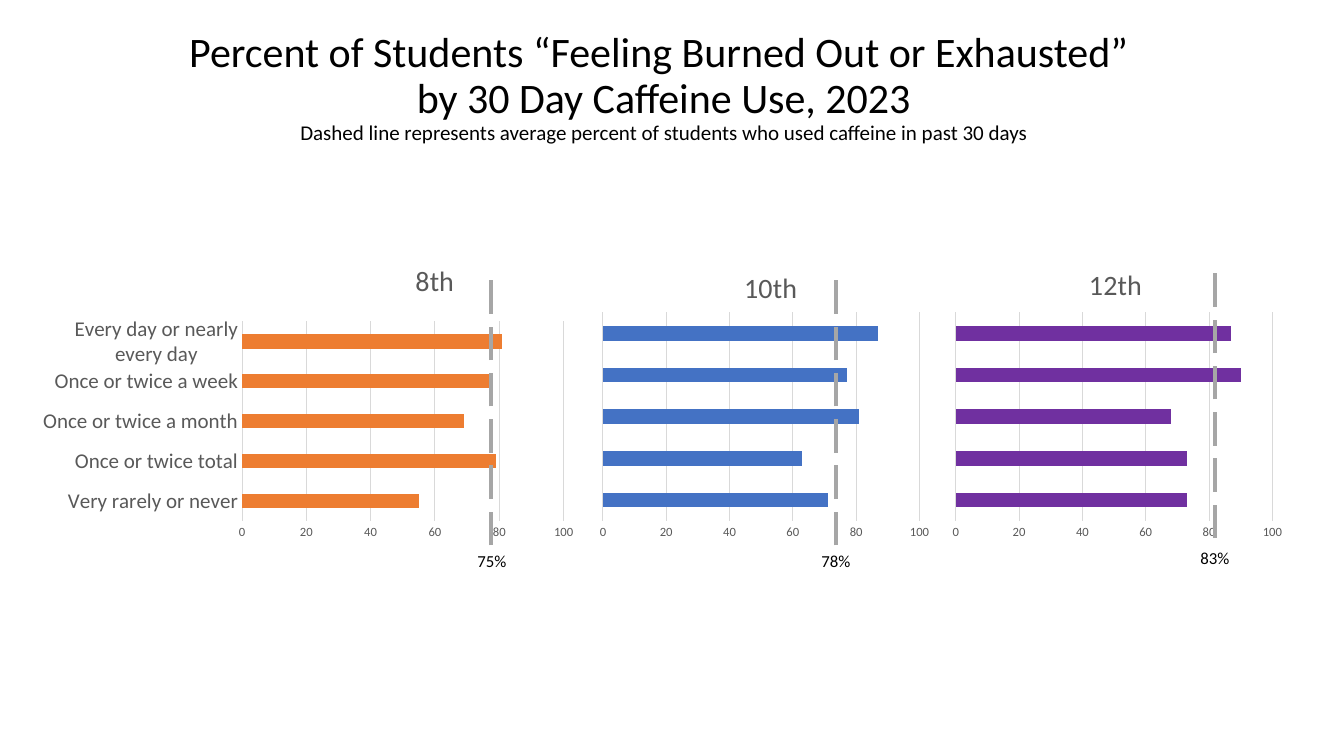
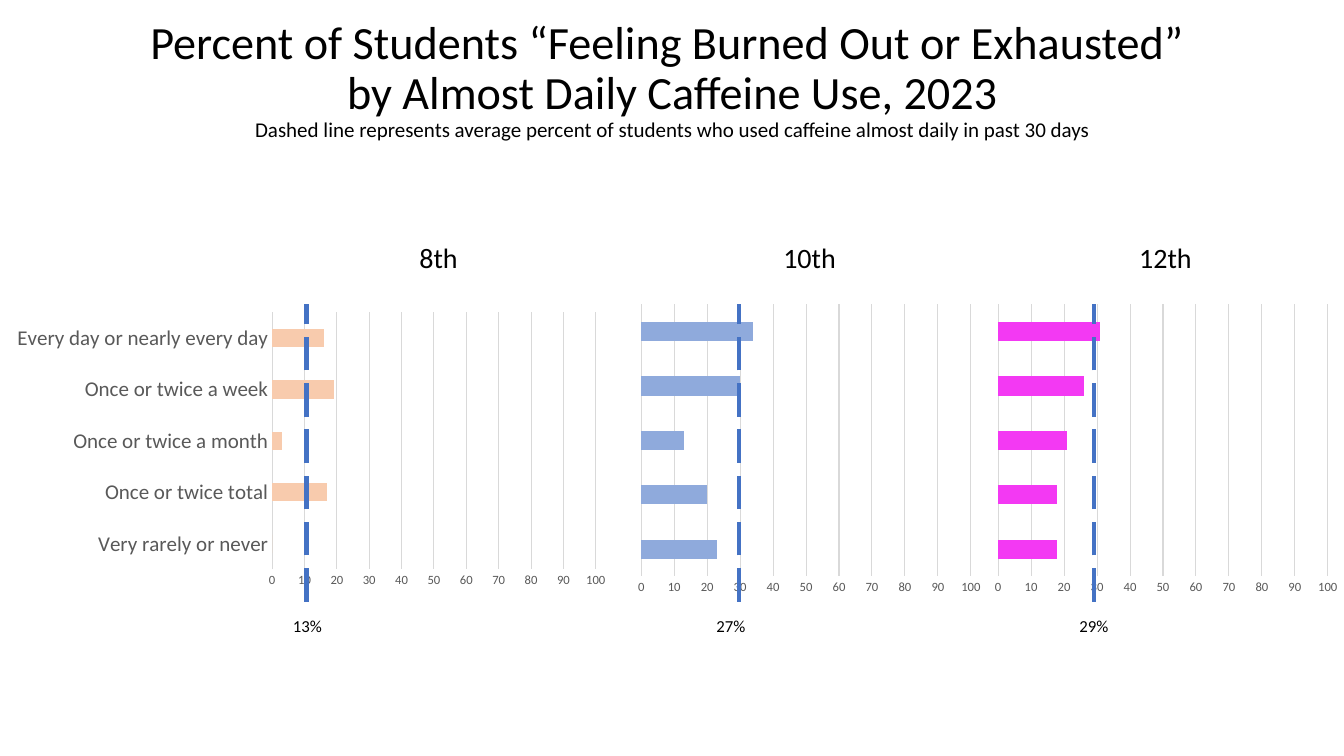
from dataclasses import dataclass

from lxml import etree
from pptx import Presentation
from pptx.chart.data import CategoryChartData
from pptx.dml.color import RGBColor
from pptx.enum.chart import XL_CHART_TYPE, XL_TICK_MARK
from pptx.enum.dml import MSO_LINE
from pptx.enum.shapes import MSO_CONNECTOR
from pptx.enum.text import MSO_ANCHOR, MSO_AUTO_SIZE, PP_ALIGN
from pptx.oxml.ns import qn
from pptx.util import Inches, Pt

BAR = XL_CHART_TYPE.BAR_CLUSTERED
NO_TICK = XL_TICK_MARK.NONE
LONG_DASH = MSO_LINE.LONG_DASH
STRAIGHT = MSO_CONNECTOR.STRAIGHT
MIDDLE = MSO_ANCHOR.MIDDLE
TOP = MSO_ANCHOR.TOP
GROW = MSO_AUTO_SIZE.SHAPE_TO_FIT_TEXT
CENTER = PP_ALIGN.CENTER

FONT = "Calibri"
BLACK, GREY, GRID = "000000", "595959", "D9D9D9"
HEADLINE = "Percent of Students “Feeling Burned Out or Exhausted” "
FREQUENCIES = ["Very rarely or never", "Once or twice total", "Once or twice a month",
               "Once or twice a week", "Every day or nearly every day"]


@dataclass
class Panel:
    """One grade: boxes are left, top, width, height in inches."""
    grade: str
    values: list
    color: str
    box: tuple
    plot: tuple
    grade_at: tuple
    average: str
    average_x: float
    average_y: tuple
    label_at: tuple
    named_rows: bool = False


def rgb(hex_color):
    """Return the colour for a hex string."""
    return RGBColor.from_string(hex_color)


def style_font(font, size, color=BLACK):
    """Set the deck's font with a size and colour."""
    font.name, font.size, font.bold = FONT, Pt(size), False
    font.color.rgb = rgb(color)


def add_text(slide, box, lines, anchor=TOP, spacing=None):
    """Place centred lines, given as (text, size) pairs, in a box."""
    text_box = slide.shapes.add_textbox(*map(Inches, box))
    frame = text_box.text_frame
    frame.word_wrap = True
    frame.vertical_anchor = anchor
    if anchor == TOP:
        frame.auto_size = GROW
    for index, (text, size) in enumerate(lines):
        paragraph = frame.add_paragraph() if index else frame.paragraphs[0]
        paragraph.text = text
        paragraph.alignment = CENTER
        paragraph.line_spacing = spacing
        style_font(paragraph.font, size)


def add_title(slide, box, subject, note, size):
    """Place the two-line headline and the note below it."""
    lines = [(HEADLINE, size), (subject, size), (note, 15)]
    add_text(slide, box, lines, MIDDLE, 0.9)


def set_layout(parent, fractions, inner=False):
    """Fix a chart part at fractions of the chart area."""
    layout = parent.find(qn("c:layout"))
    if layout is None:
        layout = etree.Element(qn("c:layout"))
        text = parent.find(qn("c:tx"))
        if text is None:
            parent.insert(0, layout)
        else:
            text.addnext(layout)
    manual = etree.SubElement(layout, qn("c:manualLayout"))
    settings = [("layoutTarget", "inner")] if inner else []
    settings += [("xMode", "edge"), ("yMode", "edge")]
    settings += [(key, f"{value:.4f}") for key, value in zip("xywh", fractions)]
    for key, value in settings:
        etree.SubElement(manual, qn(f"c:{key}")).set("val", value)


def within(box, area):
    """Express a position, and a size if given, as fractions of a box."""
    left, top, width, height = box
    fractions = [(area[0] - left) / width, (area[1] - top) / height]
    return fractions + [size / whole for size, whole in zip(area[2:], (width, height))]


def style_axes(chart, step, named_rows):
    """Style the percent axis and show or hide the row names."""
    percent = chart.value_axis
    percent.minimum_scale, percent.maximum_scale, percent.major_unit = 0, 100, step
    percent.major_tick_mark = percent.minor_tick_mark = NO_TICK
    percent.format.line.fill.background()
    percent.major_gridlines.format.line.color.rgb = rgb(GRID)
    percent.major_gridlines.format.line.width = Pt(0.75)
    percent.tick_labels.number_format = "0"
    percent.tick_labels.number_format_is_linked = False
    style_font(percent.tick_labels.font, 9, GREY)
    rows = chart.category_axis
    rows.visible = named_rows
    rows.major_tick_mark = rows.minor_tick_mark = NO_TICK
    rows.format.line.color.rgb = rgb(GRID)
    rows.format.line.width = Pt(0.75)
    style_font(rows.tick_labels.font, 15, GREY)


def add_bars(slide, panel, step, title_in_chart):
    """Place the bar chart of one grade."""
    data = CategoryChartData(number_format="0")
    data.categories = FREQUENCIES if panel.named_rows else list("12345")
    data.add_series("Series 1", panel.values)
    chart = slide.shapes.add_chart(BAR, *map(Inches, panel.box), data).chart
    chart.has_legend = False
    style_font(chart.font, 10)
    chart.has_title = title_in_chart
    if title_in_chart:
        heading = chart.chart_title.text_frame.paragraphs[0]
        heading.text = panel.grade
        style_font(heading.runs[0].font, 20, GREY)
        set_layout(chart.chart_title._element, within(panel.box, panel.grade_at))
    bars = chart.plots[0]
    bars.gap_width = 182
    bars.vary_by_categories = False
    bars.series[0].format.fill.solid()
    bars.series[0].format.fill.fore_color.rgb = rgb(panel.color)
    style_axes(chart, step, panel.named_rows)
    plot_area = chart._chartSpace.find(".//" + qn("c:plotArea"))
    set_layout(plot_area, within(panel.box, panel.plot), inner=True)


def add_average(slide, panel, color):
    """Place the dashed average line and its percentage."""
    top, bottom = panel.average_y
    x = Inches(panel.average_x)
    dashes = slide.shapes.add_connector(STRAIGHT, x, Inches(bottom), x, Inches(top))
    dashes.line.color.rgb = rgb(color)
    dashes.line.width = Pt(3)
    dashes.line.dash_style = LONG_DASH
    etree.SubElement(dashes._element.spPr, qn("a:effectLst"))
    center, label_top = panel.label_at
    add_text(slide, (center - 0.5, label_top, 1, 0.3), [(panel.average, 12)])


def add_panels(slide, panels, step, line_color, title_in_chart):
    """Place the three grades side by side."""
    for panel in panels:
        add_bars(slide, panel, step, title_in_chart)
        if not title_in_chart:
            center, top = panel.grade_at
            add_text(slide, (center - 0.48, top, 0.96, 0.44), [(panel.grade, 20)])
    for panel in panels:
        add_average(slide, panel, line_color)


def add_monthly_slide(slide):
    """Build the slide on caffeine use in 30 days."""
    add_title(slide, (-0.02, 0.15, 13.21, 1.45), "by 30 Day Caffeine Use, 2023",
              "Dashed line represents average percent of students who used caffeine "
              "in past 30 days", 30)
    panels = [
        Panel("8th", [55, 79, 69, 77, 81], "ED7D31", (0.32, 2.46, 5.47, 2.96),
              (2.4, 3.19, 3.19, 1.98), (4.07, 2.54), "75%", 4.87, (2.76, 5.41),
              (4.88, 5.41), True),
        Panel("10th", [71, 63, 81, 77, 87], "4472C4", (5.89, 2.41, 3.4, 3),
              (5.98, 3.1, 3.14, 2.07), (7.33, 2.61), "78%", 8.29, (2.76, 5.41),
              (8.29, 5.41)),
        Panel("12th", [73, 73, 68, 90, 87], "7030A0", (9.39, 2.41, 3.4, 3),
              (9.48, 3.1, 3.14, 2.07), (10.75, 2.58), "83%", 12.05, (2.68, 5.34),
              (12.05, 5.38)),
    ]
    add_panels(slide, panels, 20, "A6A6A6", True)


def add_daily_slide(slide):
    """Build the slide on almost daily caffeine use."""
    add_title(slide, (0.92, 0.08, 11.5, 1.45), "by Almost Daily Caffeine Use, 2023",
              "Dashed line represents average percent of students who used caffeine "
              "almost daily in past 30 days", 33)
    span = (3.02, 5.97)
    panels = [
        Panel("8th", [0, 17, 3, 19, 16], "F8CBAD", (0, 3.02, 6.09, 2.96),
              (2.7, 3.1, 3.21, 2.55), (4.35, 2.34), "13%", 3.04, span,
              (3.05, 6.06), True),
        Panel("10th", [23, 20, 13, 30, 34], "8FAADC", (6.26, 2.97, 3.54, 3),
              (6.36, 3.02, 3.27, 2.7), (8.03, 2.34), "27%", 7.33, span, (7.25, 6.06)),
        Panel("12th", [18, 18, 21, 26, 31], "F339F3", (9.8, 2.96, 3.54, 3),
              (9.9, 3.02, 3.27, 2.7), (11.56, 2.34), "29%", 10.85, span, (10.85, 6.06)),
    ]
    add_panels(slide, panels, 10, "4472C4", False)


def main():
    """Build and save the deck."""
    deck = Presentation()
    deck.slide_width, deck.slide_height = Inches(13.33), Inches(7.5)
    blank = deck.slide_layouts[6]
    for build in (add_monthly_slide, add_daily_slide):
        build(deck.slides.add_slide(blank))
    deck.save("out.pptx")


if __name__ == "__main__":
    main()
